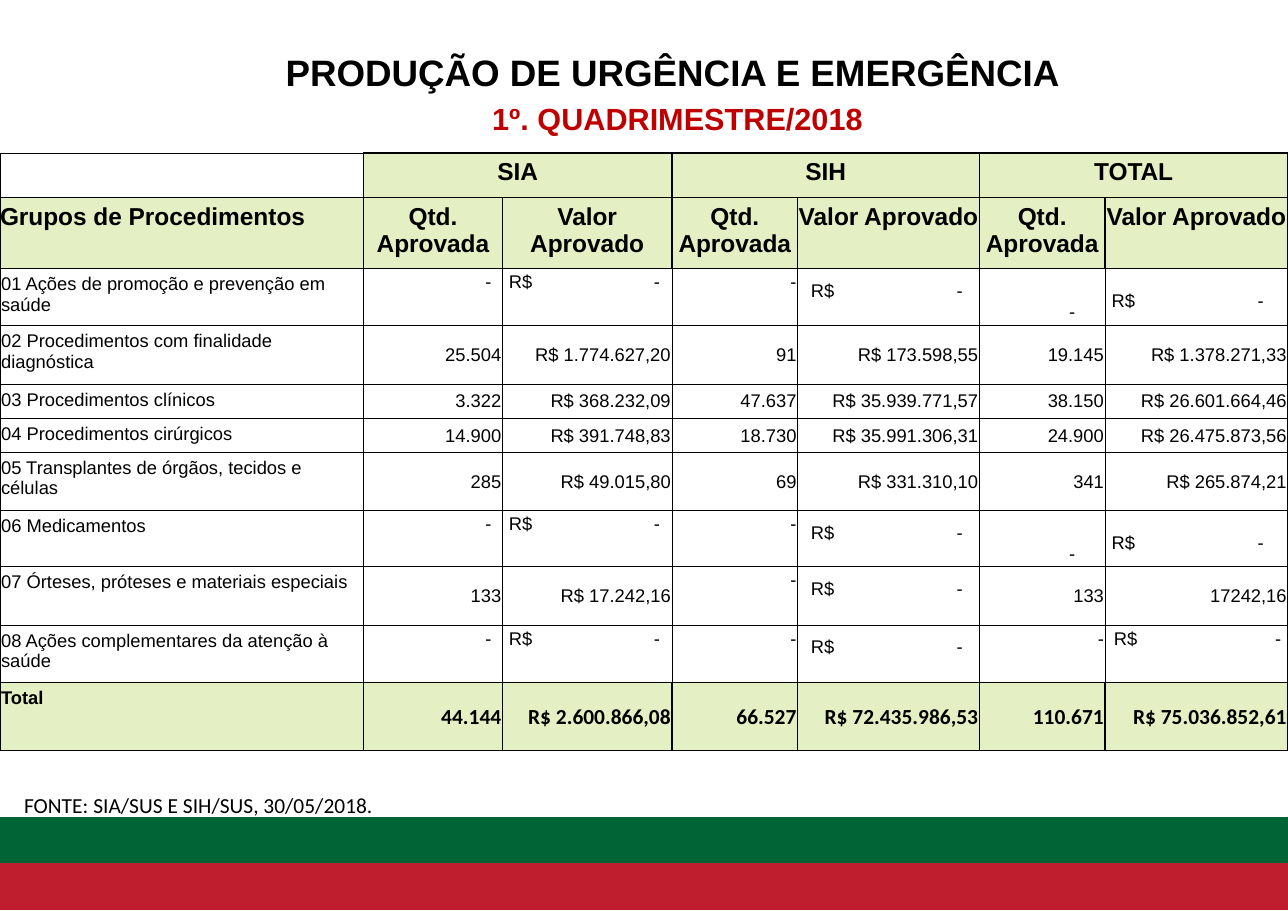
from pptx import Presentation
from pptx.dml.color import RGBColor
from pptx.enum.shapes import MSO_SHAPE
from pptx.enum.text import MSO_ANCHOR, PP_ALIGN
from pptx.oxml.ns import qn
from pptx.util import Inches, Pt
from lxml.etree import SubElement

BLACK, WHITE, LIME = "000000", "FFFFFF", "E4F0C3"
GREEN, RED, DARK = "006436", "BE1E2E", "C00000"
LEFT, MID, RIGHT = PP_ALIGN.LEFT, PP_ALIGN.CENTER, PP_ALIGN.RIGHT
THIN, THICK = 0.5, 0.96

COLS = [3.3, 1.26, 1.54, 1.14, 1.65, 1.14, 1.66]
ROWS = [0.4, 0.64, 0.52, 0.53, 0.31, 0.31, 0.53, 0.51, 0.53, 0.52, 0.62]
QTY, VALUE = "Qtd. Aprovada", "Valor Aprovado"
DATA = [
    ["", "SIA", "", "SIH", "", "TOTAL", ""],
    ["Grupos de Procedimentos"] + [QTY, VALUE] * 3,
    ["01 Ações de promoção e prevenção em saúde"] + ["-"] * 6,
    ["02 Procedimentos com finalidade diagnóstica", "25.504", "R$ 1.774.627,20",
     "91", "R$ 173.598,55", "19.145", "R$ 1.378.271,33"],
    ["03 Procedimentos clínicos", "3.322", "R$ 368.232,09",
     "47.637", "R$ 35.939.771,57", "38.150", "R$ 26.601.664,46"],
    ["04 Procedimentos cirúrgicos", "14.900", "R$ 391.748,83",
     "18.730", "R$ 35.991.306,31", "24.900", "R$ 26.475.873,56"],
    ["05 Transplantes de órgãos, tecidos e células", "285", "R$ 49.015,80",
     "69", "R$ 331.310,10", "341", "R$ 265.874,21"],
    ["06 Medicamentos"] + ["-"] * 6,
    ["07 Órteses, próteses e materiais especiais", "133", "R$ 17.242,16",
     "-", "-", "133", "17242,16"],
    ["08 Ações complementares da atenção à saúde"] + ["-"] * 6,
    ["Total", "44.144", "R$ 2.600.866,08", "66.527", "R$ 72.435.986,53",
     "110.671", "R$ 75.036.852,61"],
]
LAST_ROW, LAST_COL = len(ROWS) - 1, len(COLS) - 1

# Dash cells by column: left, top and right inset
DASH = {1: (0.01, 0.03, 0.1), 2: (0.06, 0.03, 0.11), 3: (0.01, 0.03, 0.01),
        4: (0.12, 0.11, 0.15), 5: (0.01, 0.3, 0.27), 6: (0.06, 0.2, 0.22)}
LAST_DASH = {5: (0.01, 0.03, 0.01), 6: (0.08, 0.03, 0.06)}


def color(text):
    return RGBColor.from_string(text)


def assign(item, values):
    for name, value in values.items():
        setattr(item, name, value)


def inset(left, top, right, bottom):
    sides = ("left", "top", "right", "bottom")
    return {f"margin_{side}": Inches(size)
            for side, size in zip(sides, (left, top, right, bottom))}


def font(size, bold=False, name="Arial"):
    return {"size": Pt(size), "bold": bold, "name": name}


def write(par, text, style, align=LEFT, tint=BLACK):
    par.alignment = align
    run = par.add_run()
    run.text = text
    assign(run.font, style)
    run.font.color.rgb = color(tint)


def border(cell, widths):
    """Draw the left, right, top and bottom borders, widths in points."""
    props = cell._tc.get_or_add_tcPr()
    for side, width in zip("LRTB", widths):
        line = SubElement(props, qn(f"a:ln{side}"), w=str(Pt(width)))
        fill = SubElement(line, qn("a:solidFill"))
        SubElement(fill, qn("a:srgbClr"), val=BLACK)


def widths(row, col):
    if (row, col) == (0, 0):
        return THIN, THICK, THIN, THICK
    if row in (0, 1, LAST_ROW):
        return (THICK,) * 4
    edges = col == 0, col == LAST_COL, row == 2, row == LAST_ROW - 1
    return [THICK if edge else THIN for edge in edges]


def dash(cell, row, col):
    """Fill a cell without production: a dash, after R$ in value columns."""
    spots = DASH | LAST_DASH if row == LAST_ROW - 1 else DASH
    left, top, right = spots[col]
    par = cell.text_frame.paragraphs[0]
    cell.vertical_anchor = MSO_ANCHOR.TOP
    if col % 2:
        assign(cell, inset(left, top, right, 0))
        write(par, "-", font(12), RIGHT)
        return
    assign(cell, inset(left, top, 0.01, 0))
    tabs = SubElement(par._p.get_or_add_pPr(), qn("a:tabLst"))
    stop = Inches(COLS[col] - left - right)
    SubElement(tabs, qn("a:tab"), pos=str(stop), algn="r")
    write(par, "R$\t-", font(12))


def fill_cell(cell, row, col, text):
    border(cell, widths(row, col))
    head, total = row < 2, row == LAST_ROW
    if (head or total) and (row, col) != (0, 0):
        cell.fill.solid()
        cell.fill.fore_color.rgb = color(LIME)
    else:
        cell.fill.background()
    if text == "-":
        dash(cell, row, col)
        return
    if head:
        assign(cell, inset(0, 0.05, 0, 0.05))
        style, align = font(16, True), MID if col else LEFT
    elif col == 0:
        assign(cell, inset(0.01, 0.05, 0.01, 0.05))
        style, align = font(12, total), LEFT
    else:
        assign(cell, inset(0.01, 0.01, 0.01, 0))
        cell.vertical_anchor = MSO_ANCHOR.MIDDLE
        style = font(14, True, "Calibri") if total else font(12)
        align = RIGHT
    if text:
        write(cell.text_frame.paragraphs[0], text, style, align)


class Deck:
    def __init__(self, wide, high):
        self.show = Presentation()
        assign(self.show, {"slide_width": Inches(wide), "slide_height": Inches(high)})
        self.slide = self.show.slides.add_slide(self.show.slide_layouts[6])
        self.shapes = self.slide.shapes

    def band(self, top, high, tint, line):
        box = self.shapes.add_shape(MSO_SHAPE.RECTANGLE, 0, Inches(top),
                                    self.show.slide_width, Inches(high))
        box.shadow.inherit = False
        box.fill.solid()
        box.fill.fore_color.rgb = box.line.color.rgb = color(tint)
        box.line.width = Pt(line)

    def text(self, place, margins, anchor):
        frame = self.shapes.add_textbox(*map(Inches, place)).text_frame
        assign(frame, {"word_wrap": True, "vertical_anchor": anchor} | inset(*margins))
        return frame

    def table(self, top):
        grid = self.shapes.add_table(len(ROWS), len(COLS), 0, Inches(top),
                                     Inches(sum(COLS)), Inches(sum(ROWS))).table
        assign(grid, {"first_row": False, "horz_banding": False})
        for col, wide in zip(grid.columns, COLS):
            col.width = Inches(wide)
        for row, high in zip(grid.rows, ROWS):
            row.height = Inches(high)
        for col in (1, 3, 5):
            grid.cell(0, col).merge(grid.cell(0, col + 1))
        for row, texts in enumerate(DATA):
            for col, text in enumerate(texts):
                fill_cell(grid.cell(row, col), row, col, text)


def main():
    deck = Deck(11.69, 8.27)
    deck.band(7.81, 0.45, RED, 0.75)
    deck.band(7.38, 0.45, GREEN, 0.75)
    deck.band(0, 7.4, WHITE, 2)
    deck.table(1.39)

    title = deck.text((2.22, 0.32, 7.77, 1.06), (0, 0, 0, 0), MSO_ANCHOR.MIDDLE)
    write(title.paragraphs[0], "PRODUÇÃO DE URGÊNCIA E EMERGÊNCIA", font(24, True), MID)
    term = title.add_paragraph()
    term.space_before = Pt(4)
    term._p.get_or_add_pPr().set("marL", str(Inches(0.09)))
    write(term, "1º. QUADRIMESTRE/2018", font(20, True), MID, DARK)

    note = deck.text((0.12, 7.14, 4.56, 0.42), (0.1, 0.05, 0.1, 0.05), MSO_ANCHOR.TOP)
    write(note.paragraphs[0], "FONTE: SIA/SUS E SIH/SUS, 30/05/2018.",
          font(14, name="Calibri"))
    deck.show.save("out.pptx")


if __name__ == "__main__":
    main()
